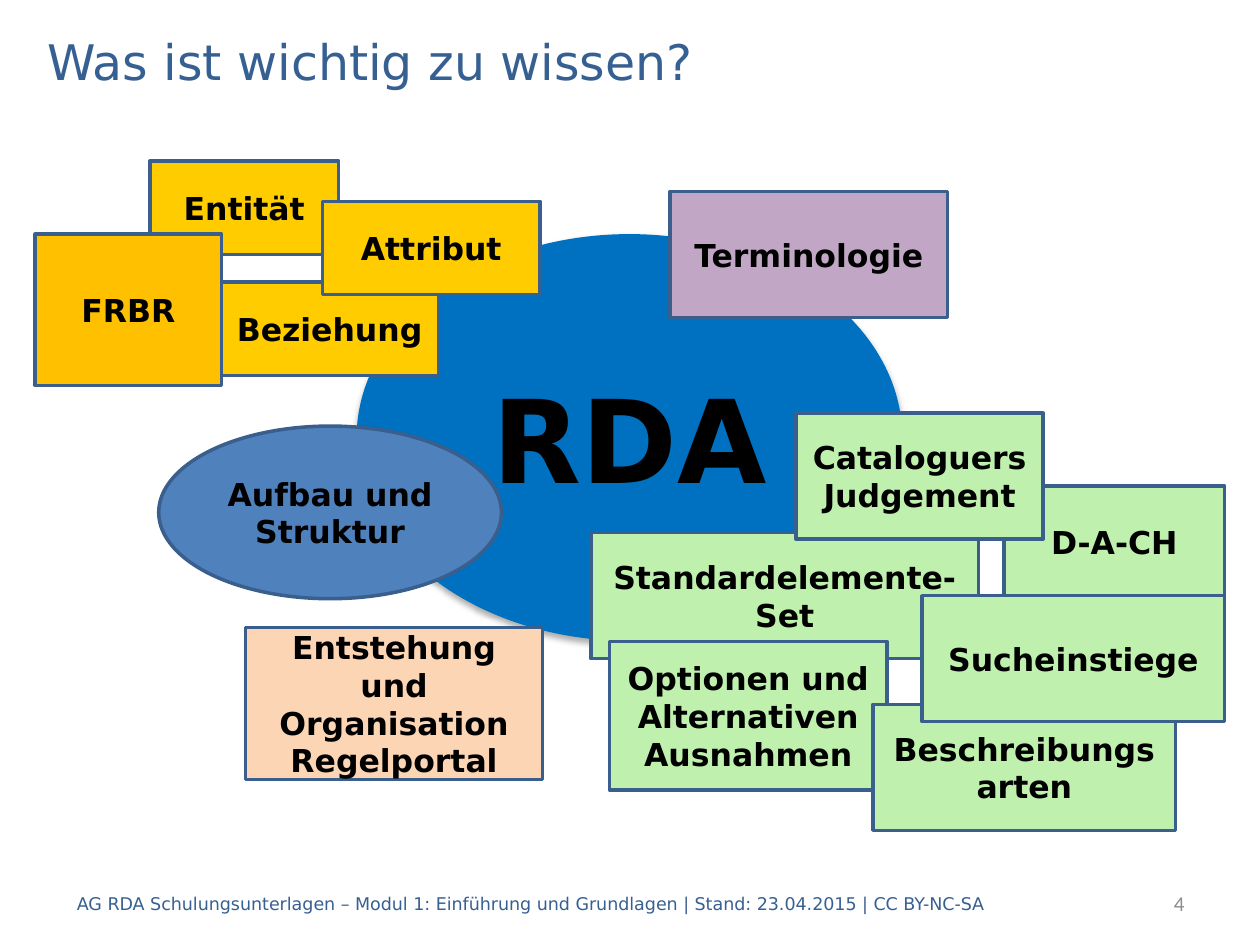
from lxml import etree
from pptx import Presentation
from pptx.dml.color import RGBColor
from pptx.enum.shapes import MSO_SHAPE
from pptx.enum.text import MSO_ANCHOR, PP_ALIGN
from pptx.oxml.ns import qn
from pptx.util import Cm, Pt

RECTANGLE, ELLIPSE = MSO_SHAPE.RECTANGLE, MSO_SHAPE.OVAL
LEFT, CENTER, RIGHT = PP_ALIGN.LEFT, PP_ALIGN.CENTER, PP_ALIGN.RIGHT
MIDDLE = MSO_ANCHOR.MIDDLE
MAIN_FONT, NUMBER_FONT = "DejaVu Sans", "Calibri"

COLORS = {
    "heading": "376092",
    "number": "8C8C8C",
    "text": "000000",
    "outline": "3A5F8C",
    "core": "0070C0",
    "structure": "4F81BD",
    "terminology": "C1A7C5",
    "model": "FFC000",
    "model part": "FFCC00",
    "origin": "FCD5B5",
    "practice": "BFF0AE",
}

# text, (left, top, width, height) in cm, size, font, color, alignment
LABELS = [
    ("Was ist wichtig zu wissen?", (0.71, 0.51, 24, 1.42),
     28, MAIN_FONT, "heading", LEFT),
    ("AG RDA Schulungsunterlagen – Modul 1: Einführung und Grundlagen | "
     "Stand: 23.04.2015 | CC BY-NC-SA", (1.3, 17.7, 21, 1.02),
     10, MAIN_FONT, "heading", LEFT),
    ("4", (22.71, 17.7, 1.42, 1.02), 12, NUMBER_FONT, "number", RIGHT),
]

CORE = (["RDA"], ELLIPSE, "core", (7.19, 4.72, 11, 8.2))

# paragraphs, form, color, (left, top, width, height) in cm, back to front
TOPICS = [
    (["Terminologie"], RECTANGLE, "terminology", (13.51, 3.86, 5.59, 2.54)),
    (["Aufbau und Struktur"], ELLIPSE, "structure", (3.2, 8.59, 6.91, 3.48)),
    (["Entität"], RECTANGLE, "model part", (3.02, 3.25, 3.81, 1.88)),
    (["Beziehung"], RECTANGLE, "model part", (4.45, 5.69, 4.39, 1.88)),
    (["Attribut"], RECTANGLE, "model part", (6.5, 4.06, 4.39, 1.88)),
    (["Standardelemente-Set"], RECTANGLE, "practice", (11.91, 10.74, 7.82, 2.54)),
    (["D-A-CH"], RECTANGLE, "practice", (20.24, 9.8, 4.45, 2.26)),
    (["Entstehung und Organisation", "Regelportal"], RECTANGLE, "origin",
     (4.95, 12.65, 5.99, 3.07)),
    (["Optionen und Alternativen", "Ausnahmen"], RECTANGLE, "practice",
     (12.29, 12.93, 5.59, 3)),
    (["Beschreibungsarten"], RECTANGLE, "practice", (17.6, 14.2, 6.1, 2.54)),
    (["Sucheinstiege"], RECTANGLE, "practice", (18.59, 12.01, 6.1, 2.54)),
    (["FRBR"], RECTANGLE, "model", (0.71, 4.72, 3.76, 3.05)),
    (["Cataloguers Judgement"], RECTANGLE, "practice", (16.05, 8.33, 4.98, 2.54)),
]


def color(name):
    return RGBColor.from_string(COLORS[name])


def write(shape, lines, size, font, color_name, alignment, bold=False):
    frame = shape.text_frame
    frame.word_wrap = True
    frame.vertical_anchor = MIDDLE
    for index, line in enumerate(lines):
        paragraph = frame.add_paragraph() if index else frame.paragraphs[0]
        paragraph.alignment = alignment
        run = paragraph.add_run()
        run.text = line
        run.font.size = Pt(size)
        run.font.name = font
        run.font.bold = bold
        run.font.color.rgb = color(color_name)


def add_topic(slide, lines, form, fill, box, size=18, outlined=True):
    shape = slide.shapes.add_shape(form, *map(Cm, box))
    shape.shadow.inherit = False
    shape.fill.solid()
    shape.fill.fore_color.rgb = color(fill)
    if outlined:
        shape.line.color.rgb = color("outline")
        shape.line.width = Pt(2)
    else:
        shape.line.fill.background()
    write(shape, lines, size, MAIN_FONT, "text", CENTER, bold=True)
    return shape


def add_soft_shadow(shape):
    effects = shape.element.spPr.find(qn("a:effectLst"))
    shadow = etree.SubElement(
        effects, qn("a:outerShdw"), blurRad=str(Pt(3.5)), dist=str(Pt(2.2)),
        dir=str(90 * 60000), rotWithShape="0")
    tone = etree.SubElement(shadow, qn("a:srgbClr"), val=COLORS["text"])
    etree.SubElement(tone, qn("a:alpha"), val="32000")


def main():
    presentation = Presentation()
    presentation.slide_width, presentation.slide_height = Cm(25.4), Cm(19.05)
    slide = presentation.slides.add_slide(presentation.slide_layouts[6])

    for text, box, size, font, color_name, alignment in LABELS:
        label = slide.shapes.add_textbox(*map(Cm, box))
        write(label, [text], size, font, color_name, alignment)

    add_soft_shadow(add_topic(slide, *CORE, size=66, outlined=False))
    for topic in TOPICS:
        add_topic(slide, *topic)

    presentation.save("out.pptx")


if __name__ == "__main__":
    main()
